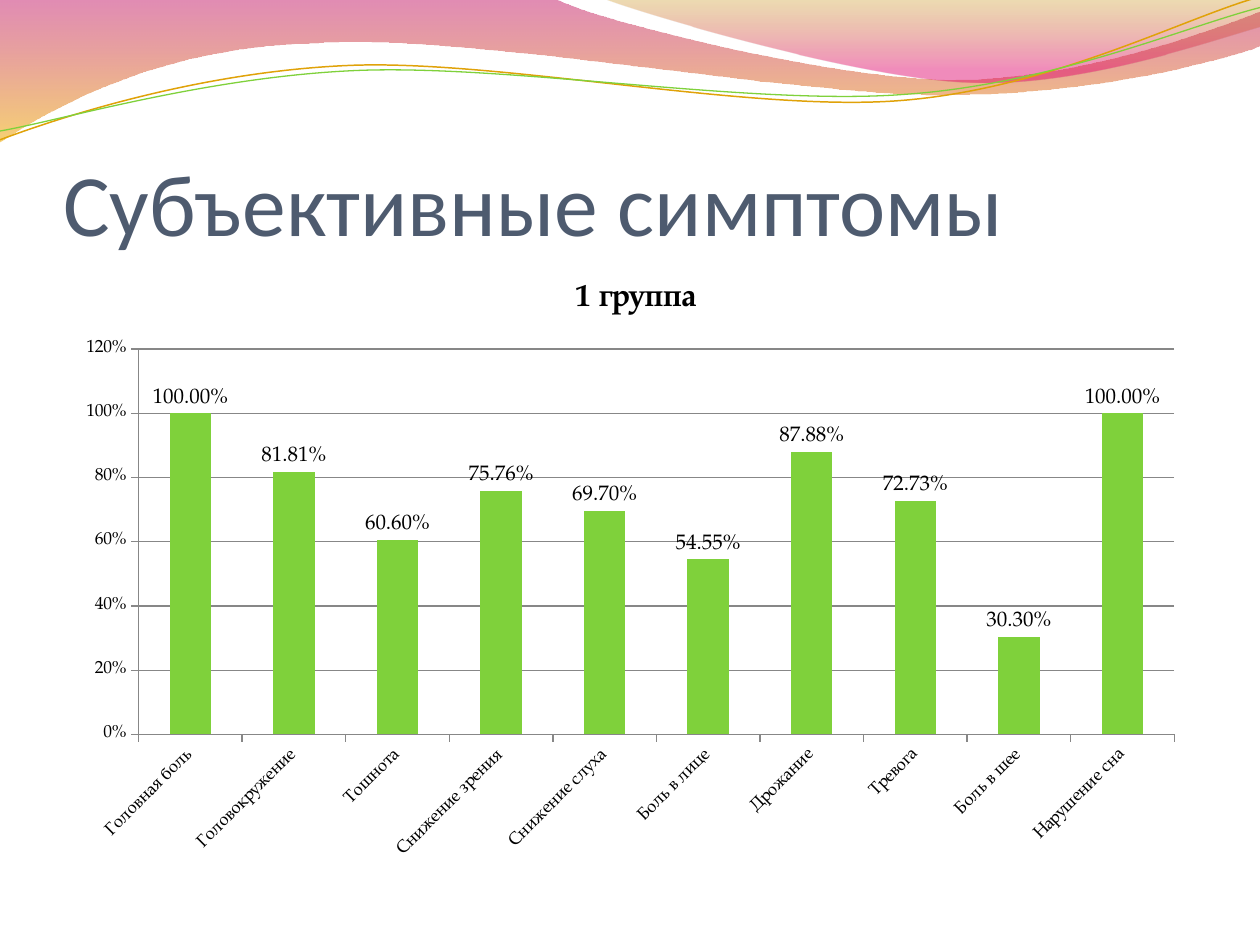
from lxml import etree
from pptx import Presentation
from pptx.chart.data import CategoryChartData
from pptx.dml.color import RGBColor
from pptx.enum.chart import XL_CHART_TYPE, XL_LABEL_POSITION, XL_TICK_MARK
from pptx.enum.text import MSO_ANCHOR, PP_ALIGN
from pptx.oxml.ns import qn
from pptx.util import Inches, Pt

COLUMNS = XL_CHART_TYPE.COLUMN_CLUSTERED
OUTSIDE_END = XL_LABEL_POSITION.OUTSIDE_END
TICK_OUT = XL_TICK_MARK.OUTSIDE
BOTTOM = MSO_ANCHOR.BOTTOM
LEFT = PP_ALIGN.LEFT

SLATE = RGBColor(0x4E, 0x5B, 0x6F)
GREEN = RGBColor(0x7F, 0xD1, 0x3B)
AMBER = RGBColor(0xE0, 0xA2, 0x09)
CRIMSON = RGBColor(0xBD, 0x00, 0x59)
ORANGE = RGBColor(0xF0, 0xAB, 0x00)
OCHRE = RGBColor(0xC3, 0x8B, 0x00)
PINK = RGBColor(0xE1, 0x00, 0x6B)
BLACK = RGBColor(0, 0, 0)

HEADING_FONT, CHART_FONT = "Calibri", "TeX Gyre Pagella"
WIDTH, HEIGHT = 10, 7.5
MARGIN = 0.05 * WIDTH
CHART_TOP, CHART_HEIGHT = 2.12, 0.64 * HEIGHT
CHART_WIDTH = WIDTH - 2 * MARGIN
PLOT_LEFT, PLOT_TOP, PLOT_WIDTH, PLOT_HEIGHT = 1.1, 2.77, 8.22, 3.06
GROUP_LEFT, GROUP_TOP = 4.52, 2.18

HEADING = "Субъективные симптомы"
GROUP = "1 группа"
SYMPTOMS = [
    ("Головная боль", 1), ("Головокружение", 0.8181), ("Тошнота", 0.606),
    ("Снижение зрения", 0.7576), ("Снижение слуха", 0.697),
    ("Боль в лице", 0.5455), ("Дрожание", 0.8788), ("Тревога", 0.7273),
    ("Боль в шее", 0.303), ("Нарушение сна", 1),
]

BANDS = [
    ([[(0, 0)], [(4.4, -0.01)],
      [(4.76, 0.17), (6.64, 0.63), (7.58, 0.63)],
      [(8.53, 0.63), (9.58, 0.26), (10, 0.09)],
      [(10.01, 0.36)],
      [(9.83, 0.44), (8.7, 0.76), (7.46, 0.75)],
      [(6.22, 0.75), (3.82, 0.28), (2.57, 0.34)],
      [(1.29, 0.36), (0.46, 0.83), (-0.01, 1.13)],
      [(0, 0)]],
     [(0, CRIMSON, 45), (1, ORANGE, 55)]),
    ([[(4.79, -0.01)],
      [(5.09, 0.11), (6.82, 0.62), (7.69, 0.65)],
      [(8.56, 0.69), (9.61, 0.32), (10, 0.21)],
      [(10, 0)], [(4.79, -0.01)]],
     [(0, OCHRE, 30), (0.8, PINK, 45)]),
]
WAVES = [
    ([[(0, 1.11)],
      [(0.48, 0.93), (1.58, 0.57), (2.77, 0.52)],
      [(3.95, 0.47), (5.93, 0.89), (7.13, 0.8)],
      [(8.33, 0.71), (9.38, 0.15), (9.98, -0.02)]], AMBER, 0.85),
    ([[(0, 1.04)],
      [(0.47, 0.96), (1.64, 0.61), (2.83, 0.56)],
      [(4.03, 0.51), (5.97, 0.84), (7.17, 0.75)],
      [(8.36, 0.67), (9.41, 0.21), (10, 0.06)]], GREEN, 0.75),
]


def add_outline(slide, segments, close):
    start, *rest = [(Inches(x), Inches(y))
                    for segment in segments for x, y in segment]
    builder = slide.shapes.build_freeform(*start)
    builder.add_line_segments(rest, close=close)
    outline = builder.convert_to_shape()
    outline.shadow.inherit = False
    lines = iter(list(outline._element.spPr.iter(qn("a:lnTo"))))
    for segment in segments[1:]:
        sides = [next(lines) for _ in segment]
        if len(sides) == 3:
            curve = etree.Element(qn("a:cubicBezTo"))
            sides[0].addprevious(curve)
            for side in sides:
                curve.append(side[0])
                side.getparent().remove(side)
    return outline


def add_band(slide, segments, stops):
    band = add_outline(slide, segments, True)
    band.line.fill.background()
    band.fill.gradient()
    band.fill.gradient_angle = 270
    for stop, (position, color, _) in zip(band.fill.gradient_stops, stops):
        stop.position = position
        stop.color.rgb = color
    tints = list(band._element.spPr.iter(qn("a:srgbClr")))
    for tint, (_, _, opacity) in zip(tints, stops):
        etree.SubElement(tint, qn("a:alpha"), val=str(opacity * 1000))


def add_wave(slide, segments, color, weight):
    wave = add_outline(slide, segments, False)
    wave.fill.background()
    wave.line.color.rgb = color
    wave.line.width = Pt(weight)


def add_heading(slide):
    heading = slide.shapes.title
    heading.left, heading.top = Inches(MARGIN), Inches(0.77)
    heading.width, heading.height = Inches(CHART_WIDTH), Inches(1.25)
    frame = heading.text_frame
    frame.text = HEADING
    frame.vertical_anchor = BOTTOM
    frame.margin_left = frame.margin_right = frame.margin_bottom = 0
    paragraph = frame.paragraphs[0]
    paragraph.alignment = LEFT
    paragraph.font.name = HEADING_FONT
    paragraph.font.size = Pt(50)
    paragraph.font.color.rgb = SLATE


def style(font, size, bold=False):
    font.name = CHART_FONT
    font.size = Pt(size)
    font.bold = bold
    font.color.rgb = BLACK


def place(layout, left, top, width=None, height=None):
    manual = etree.SubElement(layout, qn("c:manualLayout"))
    settings = []
    if width:
        settings.append(("layoutTarget", "inner"))
    settings += [("xMode", "edge"), ("yMode", "edge"),
                 ("x", (left - MARGIN) / CHART_WIDTH),
                 ("y", (top - CHART_TOP) / CHART_HEIGHT)]
    if width:
        settings += [("w", width / CHART_WIDTH), ("h", height / CHART_HEIGHT)]
    for tag, value in settings:
        etree.SubElement(manual, qn("c:" + tag), val=str(value))


def layout_of(part, position):
    layout = part.find(qn("c:layout"))
    if layout is None:
        layout = etree.Element(qn("c:layout"))
        part.insert(position, layout)
    return layout


def add_symptom_chart(slide):
    data = CategoryChartData(number_format="0.00%")
    data.categories = [name for name, _ in SYMPTOMS]
    data.add_series(GROUP, [share for _, share in SYMPTOMS])
    chart = slide.shapes.add_chart(
        COLUMNS, Inches(MARGIN), Inches(CHART_TOP), Inches(CHART_WIDTH),
        Inches(CHART_HEIGHT), data).chart
    style(chart.font, 10)
    chart.has_legend = False
    chart.has_title = True
    title = chart.chart_title
    title.text_frame.text = GROUP
    style(title.text_frame.paragraphs[0].font, 18, True)
    place(layout_of(title._element, 1), GROUP_LEFT, GROUP_TOP)
    plot_area = chart._chartSpace.chart.plotArea
    place(layout_of(plot_area, 0),
          PLOT_LEFT, PLOT_TOP, PLOT_WIDTH, PLOT_HEIGHT)

    shares, names = chart.value_axis, chart.category_axis
    for axis in (shares, names):
        axis.major_tick_mark = TICK_OUT
        style(axis.tick_labels.font, 10)
    shares.minimum_scale, shares.maximum_scale = 0, 1.2
    shares.major_unit = 0.2
    shares.has_major_gridlines = True
    shares.tick_labels.number_format = "0%"
    shares.tick_labels.number_format_is_linked = False
    next(names._element.iter(qn("a:bodyPr"))).set("rot", str(-45 * 60000))

    plot = chart.plots[0]
    plot.gap_width = 150
    plot.vary_by_categories = False
    bars = plot.series[0]
    bars.format.fill.solid()
    bars.format.fill.fore_color.rgb = GREEN
    labels = bars.data_labels
    labels.show_value = True
    labels.position = OUTSIDE_END
    labels.number_format = "0.00%"
    labels.number_format_is_linked = False
    style(labels.font, 12)


def main():
    deck = Presentation()
    deck.slide_width, deck.slide_height = Inches(WIDTH), Inches(HEIGHT)
    slide = deck.slides.add_slide(deck.slide_layouts[5])
    for band in BANDS:
        add_band(slide, *band)
    for wave in WAVES:
        add_wave(slide, *wave)
    add_heading(slide)
    add_symptom_chart(slide)
    deck.save("out.pptx")


if __name__ == "__main__":
    main()
